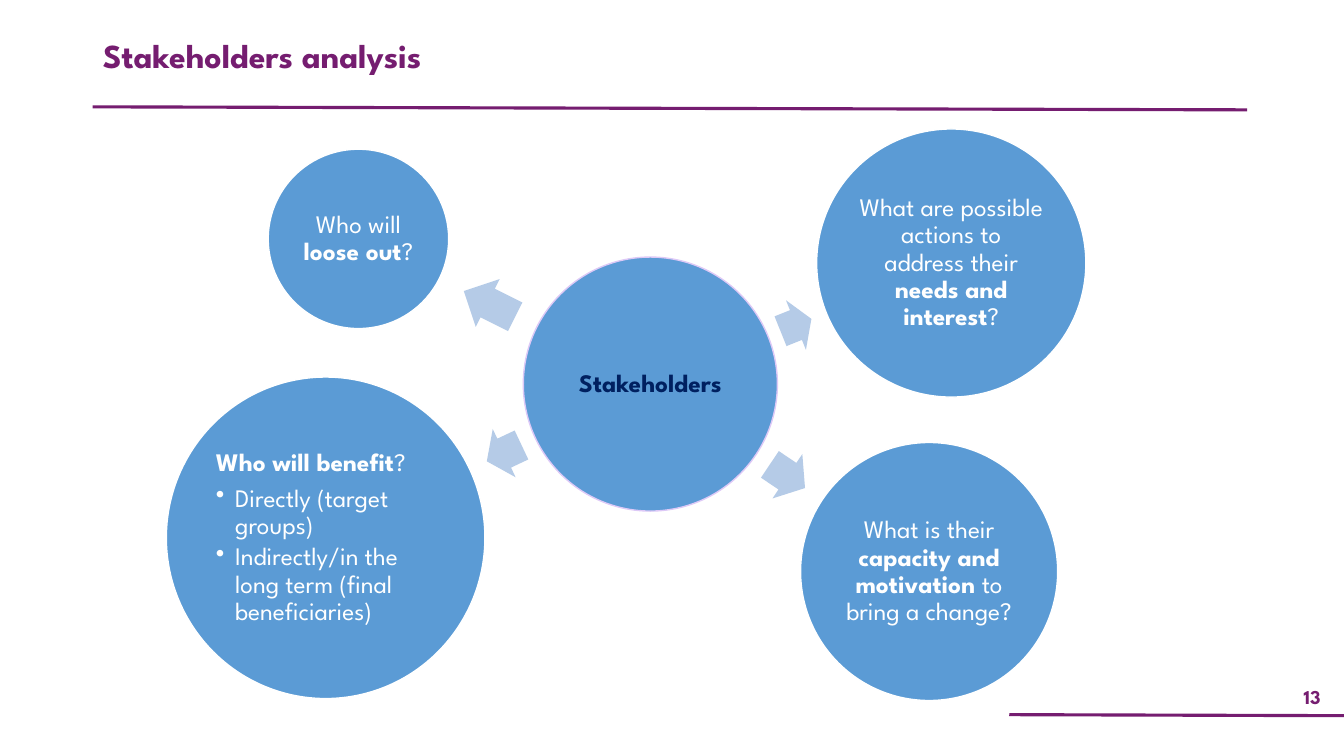
from dataclasses import dataclass

from lxml import etree
from pptx import Presentation
from pptx.dml.color import RGBColor
from pptx.enum.shapes import MSO_CONNECTOR, MSO_SHAPE
from pptx.enum.text import MSO_ANCHOR, MSO_AUTO_SIZE, PP_ALIGN
from pptx.oxml.ns import qn
from pptx.util import Inches, Pt

LEFT, CENTER, JUSTIFY = PP_ALIGN.LEFT, PP_ALIGN.CENTER, PP_ALIGN.JUSTIFY
TOP, MIDDLE = MSO_ANCHOR.TOP, MSO_ANCHOR.MIDDLE
NO_AUTOFIT = MSO_AUTO_SIZE.NONE
STRAIGHT = MSO_CONNECTOR.STRAIGHT
OVAL, RIGHT_ARROW = MSO_SHAPE.OVAL, MSO_SHAPE.RIGHT_ARROW


@dataclass(frozen=True)
class Theme:
    font: str = "League Spartan"
    purple: str = "751D70"
    blue: str = "5B9BD5"
    pale_blue: str = "B5CBE7"
    lilac: str = "DDC9F7"
    navy: str = "002060"
    white: str = "FFFFFF"
    title_size: int = 24
    body_size: int = 18
    number_size: int = 14


THEME = Theme()


def write_text(shape, text, size=THEME.body_size, color=THEME.white, align=CENTER,
               anchor=MIDDLE, inset=0.03, spacing=0.9):
    """Write lines of text; **double stars** mark bold, a leading • marks a bullet."""
    frame = shape.text_frame
    frame.word_wrap = True
    frame.auto_size = NO_AUTOFIT
    frame.vertical_anchor = anchor
    frame.margin_left = frame.margin_right = Inches(inset)
    frame.margin_top = frame.margin_bottom = Inches(min(inset, 0.05))
    for index, line in enumerate(text.split("\n")):
        paragraph = frame.paragraphs[0] if index == 0 else frame.add_paragraph()
        bulleted = line.startswith("•")
        paragraph.alignment = align
        paragraph.line_spacing = spacing
        paragraph.space_before = Pt(0)
        paragraph.space_after = Pt(size * (0.15 if bulleted else 0.35))
        if bulleted:
            paragraph.level = 1
            properties = paragraph._p.get_or_add_pPr()
            properties.set("marL", str(Inches(0.19)))
            properties.set("indent", str(-Inches(0.19)))
            etree.SubElement(properties, qn("a:buChar")).set("char", "•")
        for part, words in enumerate(line.removeprefix("•").split("**")):
            if words:
                run = paragraph.add_run()
                run.text = words
                run.font.name = THEME.font
                run.font.size = Pt(size)
                run.font.bold = part % 2 == 1
                run.font.color.rgb = RGBColor.from_string(color)


presentation = Presentation()
presentation.slide_width = Inches(13.33)
presentation.slide_height = Inches(7.5)
slide = presentation.slides.add_slide(presentation.slide_layouts[5])

# Title
title = slide.shapes.title
title.left, title.top, title.width, title.height = map(Inches, (0.92, 0.34, 9.73, 0.65))
write_text(title, "**Stakeholders analysis**", size=THEME.title_size, color=THEME.purple,
           align=JUSTIFY, anchor=TOP, inset=0.1)

# Rules under the title and the slide number
for ends in ((0.92, 1.06, 12.37, 1.09), (10.01, 7.09, 13.33, 7.1)):
    rule = slide.shapes.add_connector(STRAIGHT, *map(Inches, ends))
    rule.line.color.rgb = RGBColor.from_string(THEME.purple)
    rule.line.width = Pt(2.25)
    etree.SubElement(rule._element.spPr, qn("a:effectLst"))

# Slide number
number = slide.shapes.add_textbox(*map(Inches, (12.7, 6.73, 0.63, 0.36)))
write_text(number, "**13**", size=THEME.number_size, color=THEME.purple, inset=0.1, spacing=1.0)

# Circles: left, top, width, height, outline, text colour, alignment, text
circles = (
    (5.19, 2.55, 2.52, 2.52, THEME.lilac, THEME.navy, CENTER, "**Stakeholders**"),
    (7.94, 4.39, 2.55, 2.56, THEME.white, THEME.white, CENTER,
     "What is their **capacity and motivation **to bring a change?"),
    (8.1, 1.28, 2.67, 2.66, THEME.white, THEME.white, CENTER,
     "What are possible actions to address their **needs and interest**?"),
    (1.65, 3.74, 3.16, 3.19, THEME.white, THEME.white, LEFT,
     "**Who will benefit**?\n•Directly (target groups)\n"
     "•Indirectly/in the long term (final beneficiaries)"),
    (2.66, 1.48, 1.79, 1.78, THEME.white, THEME.white, CENTER, "Who will **loose out**?"),
)
for left, top, width, height, outline, color, align, text in circles:
    circle = slide.shapes.add_shape(OVAL, *map(Inches, (left, top, width, height)))
    circle.shadow.inherit = False
    circle.fill.solid()
    circle.fill.fore_color.rgb = RGBColor.from_string(THEME.blue)
    circle.line.color.rgb = RGBColor.from_string(outline)
    circle.line.width = Pt(1)
    write_text(circle, text, color=color, align=align)

# Arrows from the centre outwards: left, top, width, rotation
arrows = ((7.6, 4.46, 0.42, 33.9), (7.73, 2.96, 0.33, 338.1),
          (4.81, 4.23, 0.38, 154.7), (4.57, 2.75, 0.57, 206.6))
for left, top, width, rotation in arrows:
    arrow = slide.shapes.add_shape(RIGHT_ARROW, *map(Inches, (left, top, width, 0.53)))
    arrow.adjustments[0] = 0.6
    arrow.adjustments[1] = 0.5
    arrow.rotation = rotation
    arrow.shadow.inherit = False
    arrow.fill.solid()
    arrow.fill.fore_color.rgb = RGBColor.from_string(THEME.pale_blue)
    arrow.line.fill.background()

presentation.save("out.pptx")
